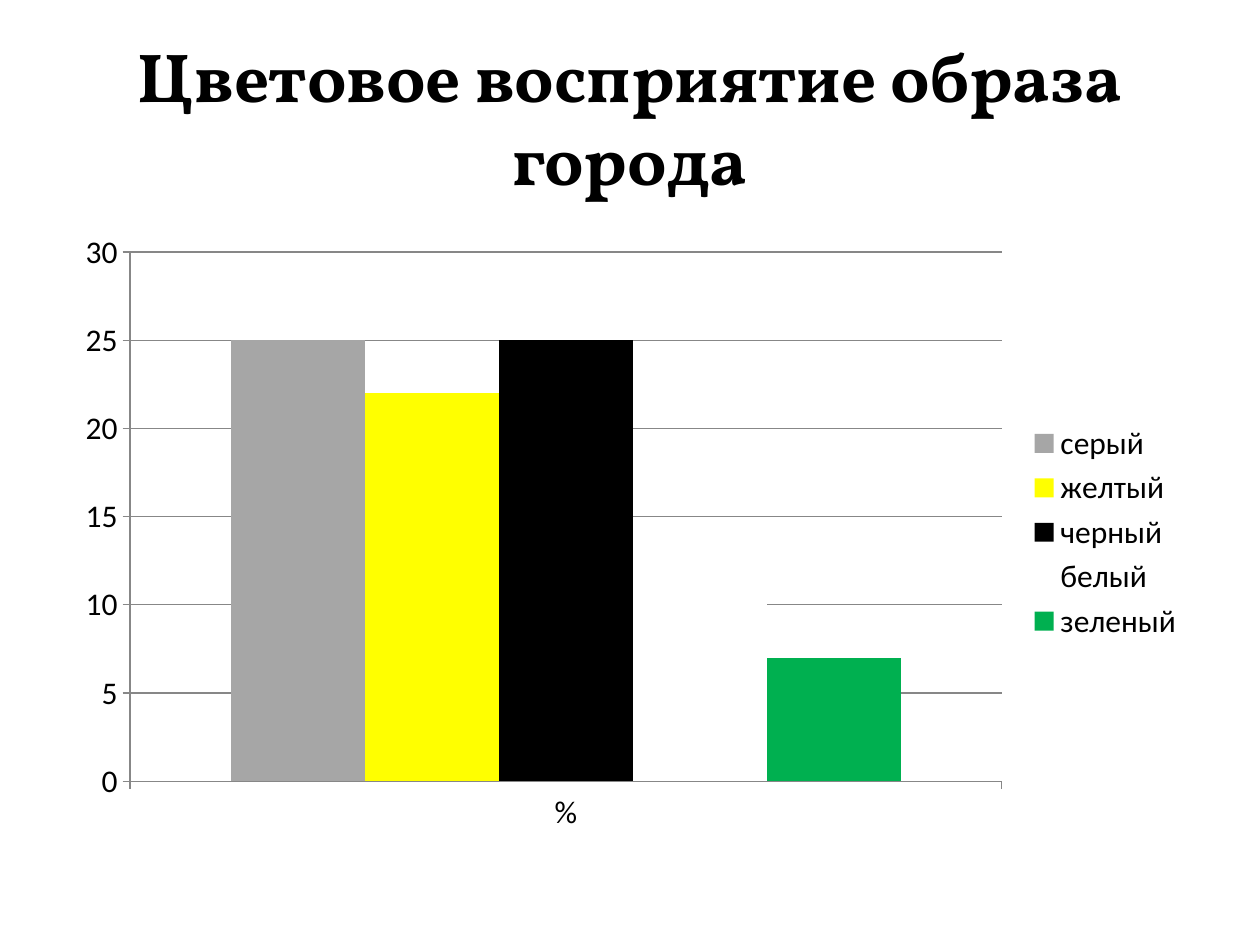
from dataclasses import dataclass

from pptx import Presentation
from pptx.chart.data import CategoryChartData
from pptx.dml.color import RGBColor
from pptx.enum.chart import XL_CHART_TYPE, XL_LEGEND_POSITION, XL_TICK_MARK
from pptx.enum.text import MSO_ANCHOR, PP_ALIGN
from pptx.util import Inches, Pt

SLIDE_WIDTH = Inches(10)
SLIDE_HEIGHT = Inches(7.5)


@dataclass(frozen=True)
class Theme:
    title_font: str = "Vollkorn"
    chart_font: str = "Calibri"
    title_size: float = 39.6
    chart_size: float = 18
    text: str = "000000"
    line: str = "878787"


@dataclass(frozen=True)
class Area:
    left: float
    top: float
    width: float
    height: float

    def lengths(self) -> tuple[int, int, int, int]:
        return (
            round(self.left * SLIDE_WIDTH),
            round(self.top * SLIDE_HEIGHT),
            round(self.width * SLIDE_WIDTH),
            round(self.height * SLIDE_HEIGHT),
        )


@dataclass(frozen=True)
class ColourShare:
    name: str
    percent: int
    colour: str


THEME = Theme()
TITLE_AREA = Area(0.05, 0.04, 0.9, 1 / 6)
CHART_AREA = Area(0.05, 0.7 / 3, 0.9, 0.66)
COLOUR_SHARES = [
    ColourShare("серый", 25, "A6A6A6"),
    ColourShare("желтый", 22, "FFFF00"),
    ColourShare("черный", 25, "000000"),
    ColourShare("белый", 11, "FFFFFF"),
    ColourShare("зеленый", 7, "00B050"),
]


def style_font(font, *, name: str, size: float, colour: str, bold: bool = False) -> None:
    font.name = name
    font.size = Pt(size)
    font.bold = bold
    font.color.rgb = RGBColor.from_string(colour)


def add_text(slide, text: str, area: Area, *, alignment=PP_ALIGN.CENTER,
             anchor=MSO_ANCHOR.MIDDLE, **font_format) -> None:
    frame = slide.shapes.add_textbox(*area.lengths()).text_frame
    frame.word_wrap = True
    frame.vertical_anchor = anchor
    paragraph = frame.paragraphs[0]
    paragraph.alignment = alignment
    run = paragraph.add_run()
    run.text = text
    style_font(run.font, **font_format)


def style_line(line) -> None:
    line.color.rgb = RGBColor.from_string(THEME.line)
    line.width = Pt(0.75)


def add_colour_chart(slide, shares: list[ColourShare], area: Area) -> None:
    data = CategoryChartData()
    data.categories = ["%"]
    for share in shares:
        data.add_series(share.name, [share.percent])
    chart = slide.shapes.add_chart(
        XL_CHART_TYPE.COLUMN_CLUSTERED, *area.lengths(), data
    ).chart
    style_font(chart.font, name=THEME.chart_font, size=THEME.chart_size, colour=THEME.text)
    chart.has_title = False
    chart.has_legend = True
    chart.legend.position = XL_LEGEND_POSITION.RIGHT
    chart.legend.include_in_layout = False

    plot = chart.plots[0]
    plot.gap_width = 150
    plot.overlap = 0
    plot.vary_by_categories = False
    for series, share in zip(plot.series, shares):
        series.format.fill.solid()
        series.format.fill.fore_color.rgb = RGBColor.from_string(share.colour)
        series.invert_if_negative = False

    for axis in (chart.category_axis, chart.value_axis):
        axis.major_tick_mark = XL_TICK_MARK.OUTSIDE
        axis.minor_tick_mark = XL_TICK_MARK.NONE
        style_line(axis.format.line)
    value_axis = chart.value_axis
    value_axis.minimum_scale = 0
    value_axis.maximum_scale = 30
    value_axis.major_unit = 5
    value_axis.has_major_gridlines = True
    style_line(value_axis.major_gridlines.format.line)


def main() -> None:
    presentation = Presentation()
    presentation.slide_width = SLIDE_WIDTH
    presentation.slide_height = SLIDE_HEIGHT
    slide = presentation.slides.add_slide(presentation.slide_layouts[6])
    add_text(slide, "Цветовое восприятие образа города", TITLE_AREA,
             name=THEME.title_font, size=THEME.title_size, colour=THEME.text, bold=True)
    add_colour_chart(slide, COLOUR_SHARES, CHART_AREA)
    presentation.save("out.pptx")


if __name__ == "__main__":
    main()
